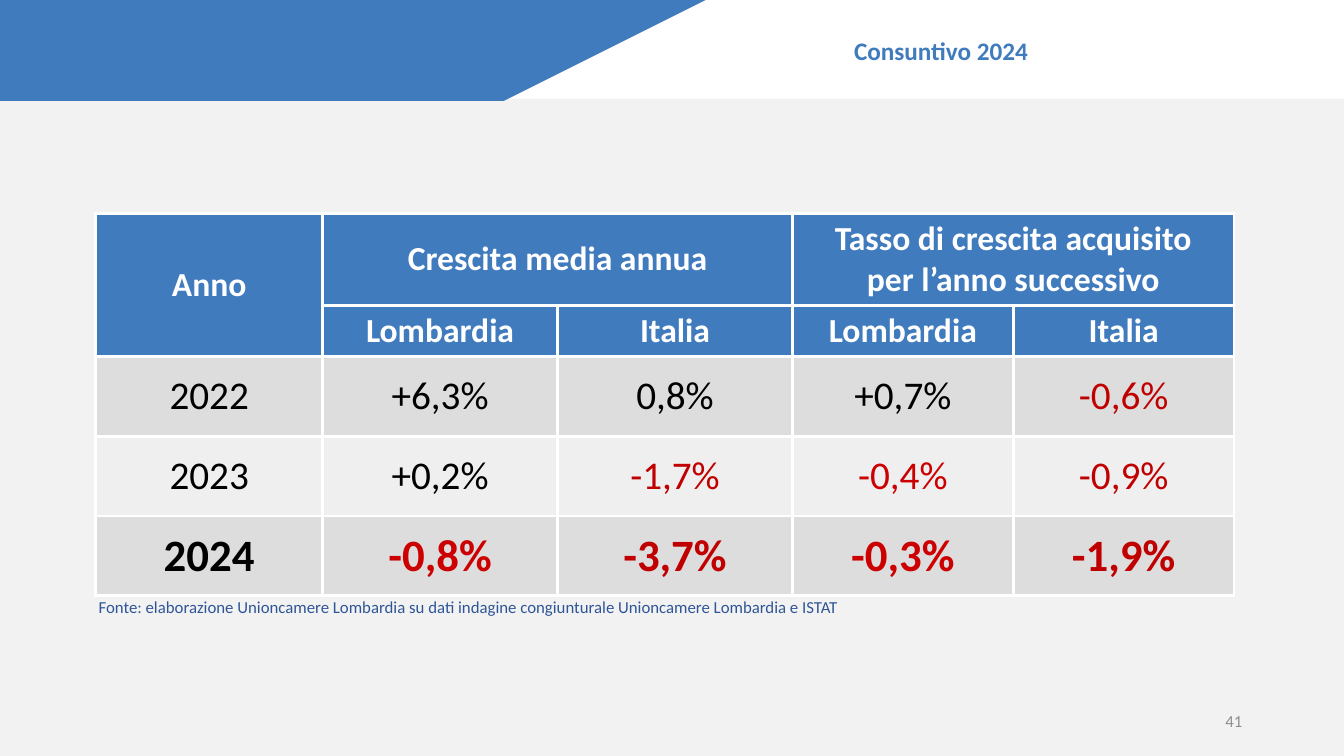
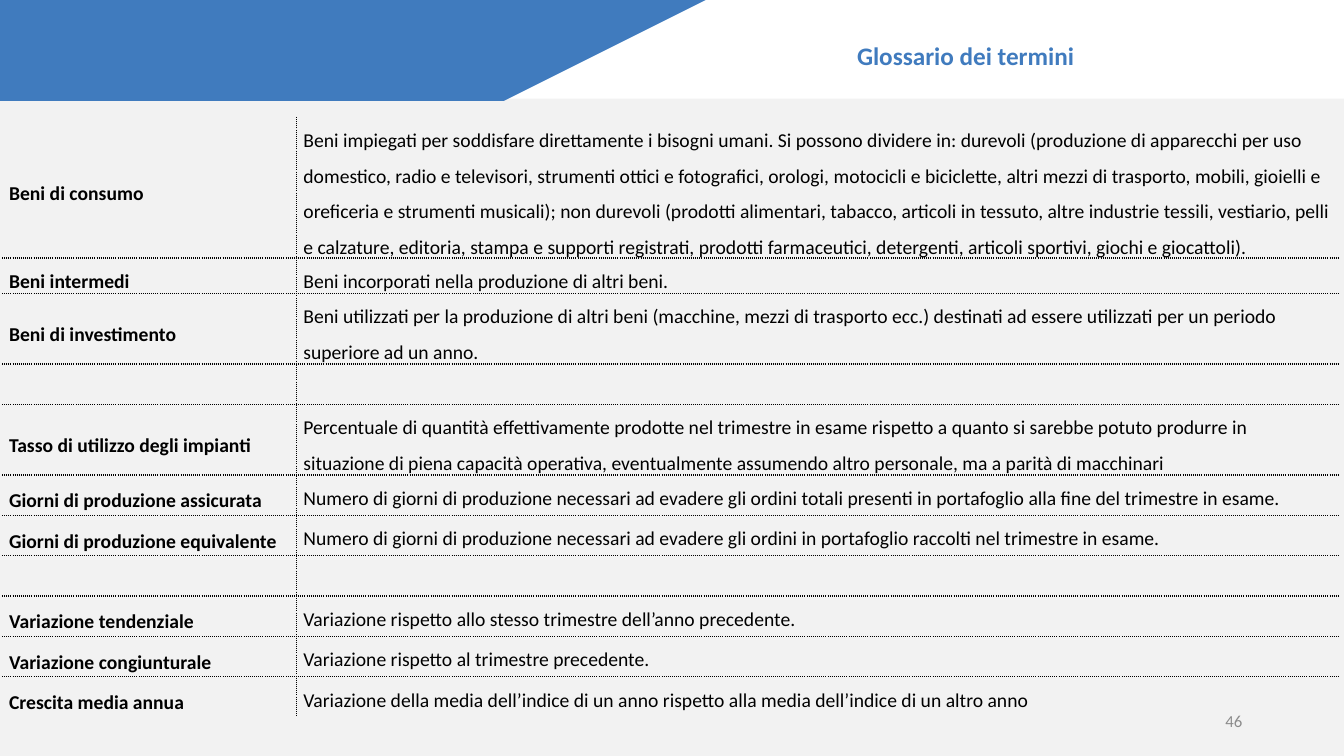
from lxml import etree
from pptx import Presentation
from pptx.dml.color import RGBColor
from pptx.enum.shapes import MSO_SHAPE
from pptx.enum.text import MSO_ANCHOR, MSO_AUTO_SIZE, PP_ALIGN
from pptx.oxml.ns import qn
from pptx.util import Inches, Pt

C = {"bg": "F2F2F2", "white": "FFFFFF", "blue": "407BBE", "navy": "2F5597",
     "grey": "8C8C8C", "black": "000000", "red": "C00000", "bright": "CC0000",
     "dark_row": "DDDDDD", "light_row": "EFEFEF"}


def write(tf, text, size, color, bold=False, align=PP_ALIGN.LEFT):
    """Write one paragraph per line of text."""
    for i, line in enumerate(text.split("\n")):
        p = tf.paragraphs[0] if i == 0 else tf.add_paragraph()
        p.alignment = align
        r = p.add_run()
        r.text = line
        r.font.name = "Calibri"
        r.font.size = Pt(size)
        r.font.bold = bold
        r.font.color.rgb = RGBColor.from_string(C[color])


def set_borders(cell, sides, color, width, dash="solid"):
    """Draw the given sides (of LRTB) and clear the others."""
    tcPr = cell._tc.get_or_add_tcPr()
    for i, side in enumerate("LRTB"):
        ln = etree.Element(qn(f"a:ln{side}"), w=str(Pt(width)))
        tcPr.insert(i, ln)
        if side in sides:
            fill = etree.SubElement(ln, qn("a:solidFill"))
            etree.SubElement(fill, qn("a:srgbClr"), val=C[color])
            etree.SubElement(ln, qn("a:prstDash"), val=dash)
        else:
            etree.SubElement(ln, qn("a:noFill"))


prs = Presentation()
prs.slide_width, prs.slide_height = Inches(13.33), Inches(7.5)
layout = prs.slide_layouts[5]

# Shared background
bg = prs.slide_master.background.fill
bg.solid()
bg.fore_color.rgb = RGBColor.from_string(C["bg"])

# Titles and page numbers
slides = []
for title, left, top, number in [("Consuntivo 2024", 8.37, 0.3, "41"),
                                 ("Glossario dei termini", 8.4, 0.35, "46")]:
    s = prs.slides.add_slide(layout)
    slides.append(s)
    sp = s.shapes.title
    sp.left, sp.top = Inches(left), Inches(top)
    sp.width, sp.height = Inches(2.74), Inches(0.4)
    tf = sp.text_frame
    tf.auto_size = MSO_AUTO_SIZE.NONE
    tf.vertical_anchor = MSO_ANCHOR.MIDDLE
    write(tf, title, 18, "blue", bold=True)

    sp = s.shapes.add_textbox(Inches(9.42), Inches(6.95), Inches(3), Inches(0.4))
    tf = sp.text_frame
    tf.word_wrap = True
    tf.vertical_anchor = MSO_ANCHOR.MIDDLE
    write(tf, number, 12, "grey", align=PP_ALIGN.RIGHT)

# Header bands, drawn once and moved to the layout
shapes = slides[0].shapes
white_band = shapes.add_shape(MSO_SHAPE.RECTANGLE, Inches(3.94), 0, Inches(9.4), Inches(0.98))
outline = shapes.build_freeform(0, 0, scale=Inches(1))
outline.add_line_segments([(6.51, 0), (5.05, 0.98), (0, 0.98)], close=True)
blue_band = outline.convert_to_shape()
for i, (band, color) in enumerate([(white_band, "white"), (blue_band, "blue")]):
    band.shadow.inherit = False
    band.fill.solid()
    band.fill.fore_color.rgb = RGBColor.from_string(C[color])
    band.line.fill.background()
    layout.shapes.element.insert(2 + i, band.element)

# Slide 1: growth table
s = slides[0]
growth = [
    ["Anno", "Crescita media annua", "", "Tasso di crescita acquisito\nper l’anno successivo", ""],
    ["", "Lombardia", "Italia", "Lombardia", "Italia"],
    ["2022", "+6,3%", "0,8%", "+0,7%", "-0,6%"],
    ["2023", "+0,2%", "-1,7%", "-0,4%", "-0,9%"],
    ["2024", "-0,8%", "-3,7%", "-0,3%", "-1,9%"],
]
row_styles = [("blue", 24, True), ("blue", 24, True), ("dark_row", 28, False),
              ("light_row", 28, False), ("dark_row", 32, True)]
tbl = s.shapes.add_table(5, 5, Inches(0.95), Inches(2.12), Inches(11.3), Inches(3.78)).table
for col, width in zip(tbl.columns, [2.25, 2.33, 2.33, 2.19, 2.19]):
    col.width = Inches(width)
for row, height in zip(tbl.rows, [0.91, 0.51, 0.79, 0.79, 0.79]):
    row.height = Inches(height)
for first, last in [((0, 0), (1, 0)), ((0, 1), (0, 2)), ((0, 3), (0, 4))]:
    tbl.cell(*first).merge(tbl.cell(*last))
for i, (values, (fill, size, bold)) in enumerate(zip(growth, row_styles)):
    for j, value in enumerate(values):
        cell = tbl.cell(i, j)
        cell.fill.solid()
        cell.fill.fore_color.rgb = RGBColor.from_string(C[fill])
        cell.vertical_anchor = MSO_ANCHOR.MIDDLE
        set_borders(cell, "LRTB", "white", 2.25)
        if i < 2:
            color = "white"
        elif value.startswith("-"):
            color = "bright" if j % 2 else "red"
        else:
            color = "black"
        if value:
            write(cell.text_frame, value, size, color, bold, PP_ALIGN.CENTER)

# Source line
sp = s.shapes.add_textbox(Inches(0.88), Inches(5.87), Inches(7.7), Inches(0.3))
sp.text_frame.word_wrap = True
write(sp.text_frame, "Fonte: elaborazione Unioncamere Lombardia su dati indagine "
      "congiunturale Unioncamere Lombardia e ISTAT", 12, "navy")

# Slide 2: glossary table
s = slides[1]
glossary = [
    ("Beni di consumo",
     "Beni impiegati per soddisfare direttamente i bisogni umani. Si possono dividere in: "
     "durevoli (produzione di apparecchi per uso domestico, radio e televisori, strumenti "
     "ottici e fotografici, orologi, motocicli e biciclette, altri mezzi di trasporto, mobili, "
     "gioielli e oreficeria e strumenti musicali); non durevoli (prodotti alimentari, tabacco, "
     "articoli in tessuto, altre industrie tessili, vestiario, pelli e calzature, editoria, "
     "stampa e supporti registrati, prodotti farmaceutici, detergenti, articoli sportivi, "
     "giochi e giocattoli)."),
    ("Beni intermedi", "Beni incorporati nella produzione di altri beni."),
    ("Beni di investimento",
     "Beni utilizzati per la produzione di altri beni (macchine, mezzi di trasporto ecc.) "
     "destinati ad essere utilizzati per un periodo superiore ad un anno."),
    ("", ""),
    ("Tasso di utilizzo degli impianti",
     "Percentuale di quantità effettivamente prodotte nel trimestre in esame rispetto a quanto "
     "si sarebbe potuto produrre in situazione di piena capacità operativa, eventualmente "
     "assumendo altro personale, ma a parità di macchinari"),
    ("Giorni di produzione assicurata",
     "Numero di giorni di produzione necessari ad evadere gli ordini totali presenti in "
     "portafoglio alla fine del trimestre in esame."),
    ("Giorni di produzione equivalente",
     "Numero di giorni di produzione necessari ad evadere gli ordini in portafoglio raccolti "
     "nel trimestre in esame."),
    ("", ""),
    ("Variazione tendenziale", "Variazione rispetto allo stesso trimestre dell’anno precedente."),
    ("Variazione congiunturale", "Variazione rispetto al trimestre precedente."),
    ("Crescita media annua",
     "Variazione della media dell’indice di un anno rispetto alla media dell’indice di un "
     "altro anno"),
]
last = len(glossary) - 1
tbl = s.shapes.add_table(len(glossary), 2, Inches(0.02), Inches(1.16),
                         Inches(13.27), Inches(5.84)).table
tbl.first_row = tbl.horz_banding = False
for col, width in zip(tbl.columns, [2.92, 10.35]):
    col.width = Inches(width)
for row, height in zip(tbl.rows, [1.31, 0.19, 0.62] + [0.4] * 8):
    row.height = Inches(height)
for i, entry in enumerate(glossary):
    for j, text in enumerate(entry):
        cell = tbl.cell(i, j)
        cell.fill.background()
        # Dotted lines run between cells only, not around the table
        sides = "RL"[j] + ("T" if i > 0 else "") + ("B" if i < last else "")
        set_borders(cell, sides, "black", 1, "sysDot")
        if text:
            cell.margin_left = cell.margin_right = Inches(0.07)
            cell.margin_top = cell.margin_bottom = 0
            cell.vertical_anchor = MSO_ANCHOR.TOP if j else MSO_ANCHOR.MIDDLE
            write(cell.text_frame, text, 14, "black", bold=j == 0)
            cell.text_frame.paragraphs[0].line_spacing = 1.5

prs.save("out.pptx")
